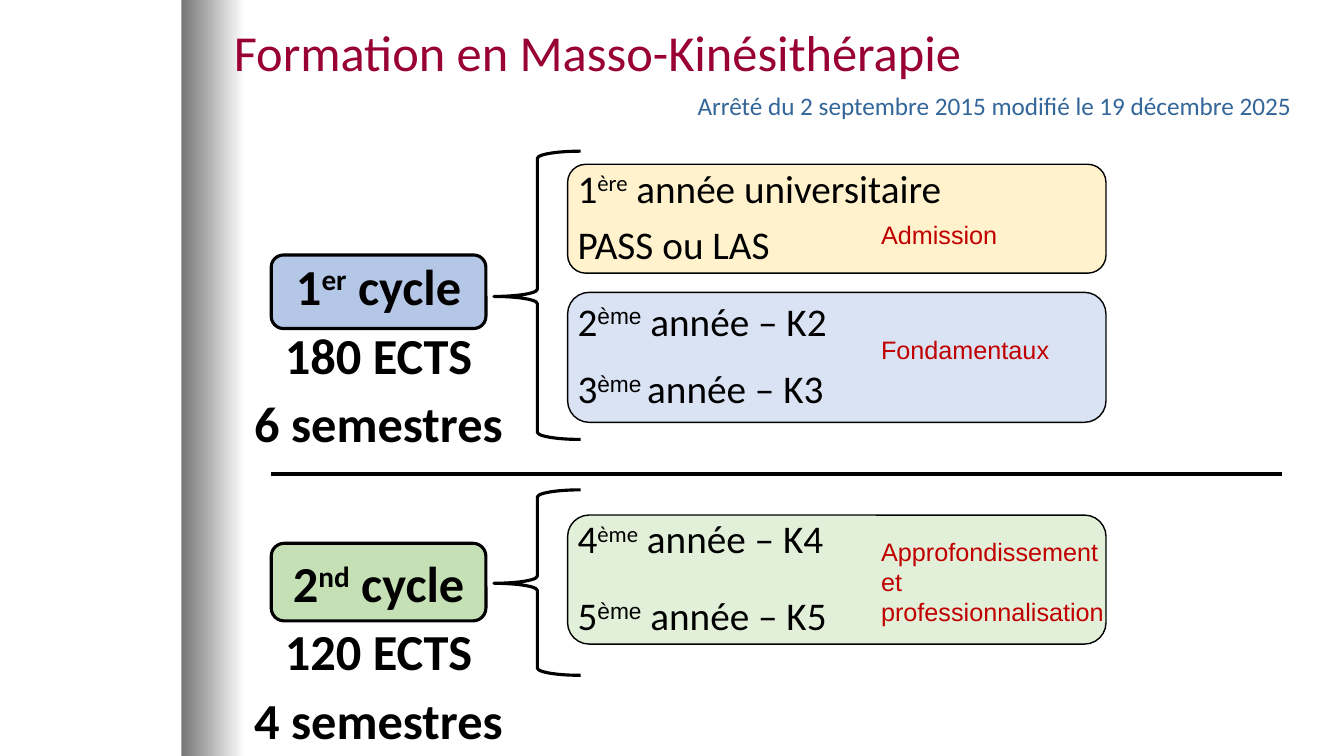
from dataclasses import dataclass

from lxml.etree import SubElement
from pptx import Presentation
from pptx.dml.color import RGBColor
from pptx.enum.shapes import MSO_CONNECTOR, MSO_SHAPE
from pptx.enum.text import MSO_ANCHOR, MSO_AUTO_SIZE, PP_ALIGN
from pptx.oxml.ns import qn
from pptx.util import Pt

EMU_PER_PX = 9144  # 100 px to the inch


def px(n):
    return n * EMU_PER_PX


@dataclass(frozen=True)
class Theme:
    heading_font: str = "Calibri"
    note_font: str = "Arial"
    ink: str = "000000"
    title: str = "990033"
    decree: str = "336699"
    note: str = "C00000"
    band_dark: str = "767676"
    band_light: str = "FFFFFF"
    cycle1: str = "B4C7E7"
    cycle2: str = "C5E0B4"
    admission: str = "FFF2CC"
    basics: str = "DAE3F3"
    advanced: str = "E2F0D9"
    big: int = 36
    medium: int = 28
    small: int = 18


class Deck:
    def __init__(self, theme):
        self.theme = theme
        self.prs = Presentation()
        self.prs.slide_width, self.prs.slide_height = px(1333), px(750)
        self.s = self.prs.slides.add_slide(self.prs.slide_layouts[6])

    def shape(self, kind, x, y, w, h):
        sp = self.s.shapes.add_shape(kind, px(x), px(y), px(w), px(h))
        sp.shadow.inherit = False
        return sp

    def outline(self, line, width):
        line.color.rgb = RGBColor.from_string(self.theme.ink)
        line.width = Pt(width)

    def band(self, x, y, w, h):
        sp = self.shape(MSO_SHAPE.RECTANGLE, x, y, w, h)
        sp.line.fill.background()
        sp.fill.gradient()
        sp.fill.gradient_angle = 0
        for stop, color in zip(sp.fill.gradient_stops,
                               (self.theme.band_dark, self.theme.band_light)):
            stop.color.rgb = RGBColor.from_string(color)

    def card(self, x, y, w, h, fill, width):
        sp = self.shape(MSO_SHAPE.ROUNDED_RECTANGLE, x, y, w, h)
        sp.fill.solid()
        sp.fill.fore_color.rgb = RGBColor.from_string(fill)
        self.outline(sp.line, width)

    def brace(self, x, y, w, h):
        sp = self.shape(MSO_SHAPE.LEFT_BRACE, x, y, w, h)
        sp.adjustments[0], sp.adjustments[1] = 0.083, 0.504
        sp.fill.background()
        self.outline(sp.line, 2.25)

    def rule(self, x1, y1, x2, y2):
        line = self.s.shapes.add_connector(
            MSO_CONNECTOR.STRAIGHT, px(x1), px(y1), px(x2), px(y2))
        SubElement(line._element.spPr, qn("a:effectLst"))
        self.outline(line.line, 3)

    def text(self, x, y, w, h, paragraphs, size, color=None, font=None,
             sup_font=None, bold=False, align=PP_ALIGN.LEFT,
             anchor=MSO_ANCHOR.TOP, spacing=None, grow=False):
        """Each paragraph is a list of parts; "^" opens a superscript part,
        and a lone space is set in the small size."""
        t = self.theme
        font = font or t.heading_font
        tf = self.s.shapes.add_textbox(px(x), px(y), px(w), px(h)).text_frame
        tf.word_wrap = True
        tf.vertical_anchor = anchor
        if grow:
            tf.auto_size = MSO_AUTO_SIZE.SHAPE_TO_FIT_TEXT
        for i, parts in enumerate(paragraphs):
            p = tf.add_paragraph() if i else tf.paragraphs[0]
            p.alignment = align
            if spacing:
                p.line_spacing = spacing
            if i:
                p.space_before = Pt(10)
            for part in parts:
                raised = part.startswith("^")
                r = p.add_run()
                r.text = part.lstrip("^")
                r.font.name = sup_font if raised and sup_font else font
                r.font.size = Pt(t.small if part == " " else size)
                r.font.bold = bold
                r.font.color.rgb = RGBColor.from_string(color or t.ink)
                if raised:
                    r.font._element.set("baseline", "30000")

    def cycle(self, y, paragraphs):
        self.text(208, y, 335, 90, paragraphs, self.theme.big, bold=True,
                  align=PP_ALIGN.CENTER, anchor=MSO_ANCHOR.BOTTOM, spacing=0.9)

    def year(self, y, w, parts):
        self.text(563, y, w, 57, [parts], self.theme.medium,
                  sup_font=self.theme.note_font, grow=True)

    def note(self, y, w, h, words):
        t = self.theme
        self.text(864, y, w, h, [[words]], t.small, t.note, t.note_font,
                  grow=True)


def main():
    t = Theme()
    d = Deck(t)
    d.band(180, 0, 63, 750)

    for y, h, fill in ((511, 128, t.advanced), (290, 129, t.basics),
                       (163, 108, t.admission)):
        d.card(563, y, 534, h, fill, 1)
    for y, h, fill in ((539, 77, t.cycle2), (253, 73, t.cycle1)):
        d.card(269, y, 213, h, fill, 2.25)

    d.text(222, -18, 1021, 145, [["Formation en Masso-Kinésithérapie"]],
           t.big, t.title, anchor=MSO_ANCHOR.MIDDLE, spacing=0.9)
    d.text(682, 85, 634, 40,
           [["Arrêté du 2 septembre 2015 modifié le 19 décembre 2025"]],
           t.small, t.decree, grow=True)

    d.cycle(365, [["1", "^er", " cycle"], ["180 ECTS"], ["6 semestres"]])
    d.cycle(659, [["2", "^nd", " cycle"], ["120 ECTS"], ["4 semestres"]])

    d.text(563, 163, 417, 112,
           [["1", "^ère", " année universitaire"], ["PASS ou LAS"]],
           t.medium, spacing=0.9)
    d.text(563, 511, 552, 79, [["4", "^ème", " année – K4"]],
           t.medium, spacing=0.9)
    d.year(290, 552, ["2", "^ème", " année – K2"])
    d.year(357, 436, ["3", "^ème", " ", "année – K3"])
    d.year(582, 659, ["5", "^ème", " année – K5"])

    for y, h in ((486, 184), (150, 286)):
        d.brace(490, y, 86, h)

    d.note(327, 224, 40, "Fondamentaux")
    d.note(527, 261, 101, "Approfondissement et professionnalisation")
    d.note(213, 200, 40, "Admission")
    d.rule(269, 470, 1272, 470)

    d.prs.save("out.pptx")


if __name__ == "__main__":
    main()
